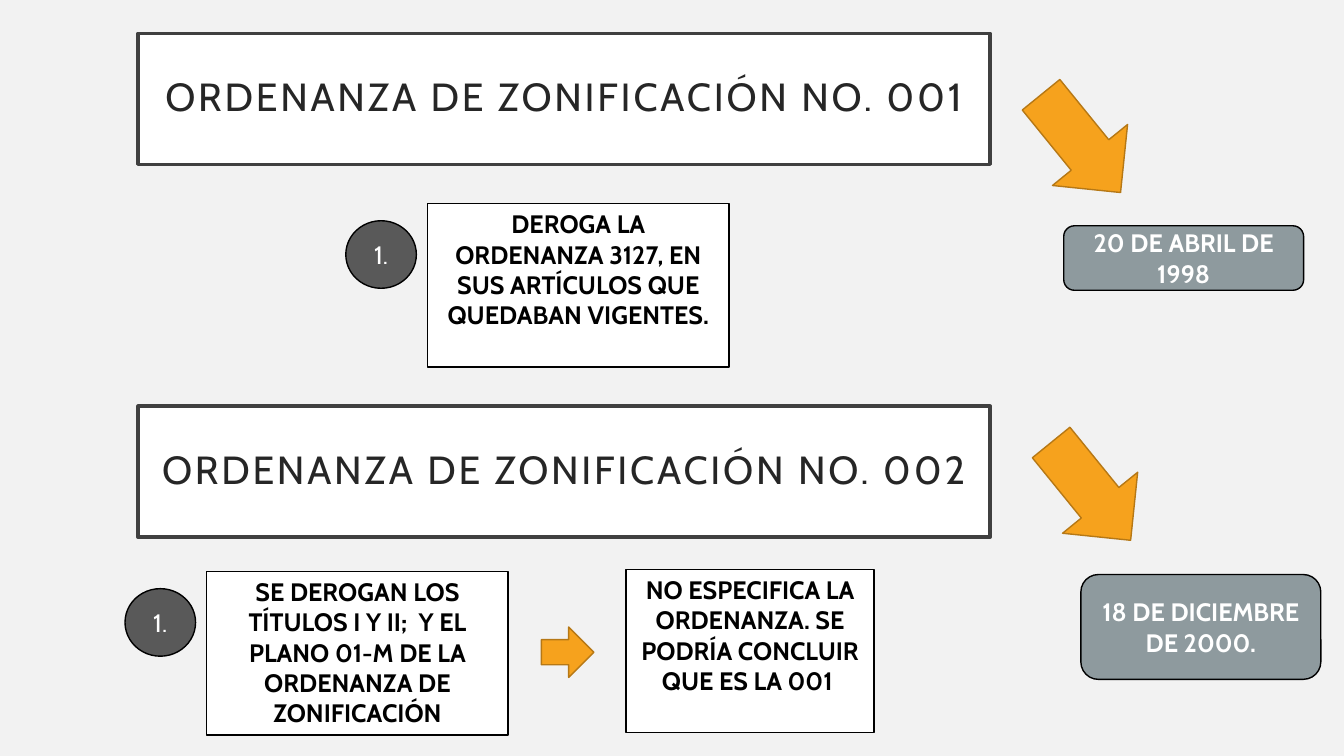
"""Build the slide on zoning ordinances 001 and 002."""
from pptx import Presentation
from pptx.dml.color import RGBColor
from pptx.enum.shapes import MSO_SHAPE
from pptx.enum.text import MSO_ANCHOR, MSO_AUTO_SIZE, PP_ALIGN
from pptx.util import Inches, Pt

RECT, OVAL = MSO_SHAPE.RECTANGLE, MSO_SHAPE.OVAL
ROUND, ARROW = MSO_SHAPE.ROUNDED_RECTANGLE, MSO_SHAPE.DOWN_ARROW
TOP, MIDDLE = MSO_ANCHOR.TOP, MSO_ANCHOR.MIDDLE
CENTER, NO_FIT = PP_ALIGN.CENTER, MSO_AUTO_SIZE.NONE

FONT = "Cabin"
COLORS = {
    "back": "F2F2F2", "white": "FFFFFF", "black": "000000", "frame": "404040",
    "title": "262626", "number": "595959", "date": "8E9A9E",
    "arrow": "F6A21D", "arrow_line": "B67815",
}
STYLES = {
    "title": {"fill": "white", "line": "frame", "width": 2.5, "ink": "title",
              "size": 28, "bold": False, "anchor": MIDDLE},
    "note": {"fill": "white", "line": "black", "width": 1, "ink": "black",
             "size": 18, "bold": True, "anchor": TOP},
    "number": {"fill": "number", "line": "black", "width": 1, "ink": "white",
               "size": 18, "bold": False, "anchor": MIDDLE},
    "date": {"fill": "date", "line": "black", "width": 1, "ink": "white",
             "size": 18, "bold": True, "anchor": MIDDLE},
    "arrow": {"fill": "arrow", "line": "arrow_line", "width": 1},
}
ORDINANCES = [
    {"title": "ORDENANZA DE ZONIFICACIÓN NO. 001", "top": 0.33,
     "number": "1.",
     "note": "DEROGA LA ORDENANZA 3127, EN SUS ARTÍCULOS QUE QUEDABAN VIGENTES.",
     "note_at": (4.24, 2.02), "arrow_at": (10.24, 0.8),
     "date": "20 DE ABRIL DE 1998", "date_box": (10.55, 2.24, 2.38, 0.64)},
    {"title": "ORDENANZA DE ZONIFICACIÓN NO. 002", "top": 4.03,
     "number": "1.",
     "note": "SE DEROGAN LOS TÍTULOS I Y II;  Y EL PLANO 01-M "
             "DE LA ORDENANZA DE ZONIFICACIÓN",
     "note_at": (2.05, 5.67), "arrow_at": (10.34, 4.25),
     "date": "18 DE DICIEMBRE DE 2000.", "date_box": (10.72, 5.7, 2.38, 1.04)},
]
REMARK = "NO ESPECIFICA LA ORDENANZA. SE PODRÍA CONCLUIR QUE ES LA 001 "
REMARK_BOX = (6.21, 5.65, 2.46, 1.62)
REMARK_ARROW = (5.38, 6.21, 0.5, 0.52)
TITLE_LEFT, TITLE_SIZE = 1.37, (8.45, 1.3)
NOTE_SIZE, NUMBER_SIZE, ARROW_SIZE = (2.99, 1.62), (0.7, 0.67), (0.96, 1.25)
NUMBER_SHIFT = (-0.81, 0.17)
ARROW_TURN = 320.9


def rgb(name):
    return RGBColor.from_string(COLORS[name])


def dress(shape, style, text=""):
    """Apply a named style and the text to a shape."""
    st = STYLES[style]
    shape.fill.solid()
    shape.fill.fore_color.rgb = rgb(st["fill"])
    shape.line.color.rgb = rgb(st["line"])
    shape.line.width = Pt(st["width"])
    if not text:
        return
    tf = shape.text_frame
    frame = {"word_wrap": True, "auto_size": NO_FIT, "vertical_anchor": st["anchor"]}
    if style == "title":
        sides = ("left", "top", "right", "bottom")
        frame.update({f"margin_{side}": Inches(0.2) for side in sides})
    for key, value in frame.items():
        setattr(tf, key, value)
    p = tf.paragraphs[0]
    p.alignment = CENTER
    r = p.add_run()
    r.text = text
    font = {"name": FONT, "size": Pt(st["size"]), "bold": st["bold"]}
    for key, value in font.items():
        setattr(r.font, key, value)
    r.font.color.rgb = rgb(st["ink"])
    if style == "title":
        p.line_spacing = 0.9
        r.font._element.set("spc", "200")


def add(s, kind, box, style, text="", turn=0):
    """Add a styled preset shape at a box given in inches."""
    shape = s.shapes.add_shape(kind, *map(Inches, box))
    shape.shadow.inherit = False
    shape.rotation = turn
    dress(shape, style, text)


def add_ordinance(s, item, first):
    """Add one ordinance: title, note, number, arrow and date."""
    title_box = (TITLE_LEFT, item["top"], *TITLE_SIZE)
    if first:
        title = s.shapes.title
        for key, value in zip(("left", "top", "width", "height"), title_box):
            setattr(title, key, Inches(value))
        dress(title, "title", item["title"])
    else:
        add(s, RECT, title_box, "title", item["title"])
    number_at = [a + b for a, b in zip(item["note_at"], NUMBER_SHIFT)]
    add(s, RECT, (*item["note_at"], *NOTE_SIZE), "note", item["note"])
    add(s, OVAL, (*number_at, *NUMBER_SIZE), "number", item["number"])
    add(s, ARROW, (*item["arrow_at"], *ARROW_SIZE), "arrow", turn=ARROW_TURN)
    add(s, ROUND, item["date_box"], "date", item["date"])


def main():
    prs = Presentation()
    prs.slide_width, prs.slide_height = Inches(13.33), Inches(7.5)
    s = prs.slides.add_slide(prs.slide_layouts[5])
    s.background.fill.solid()
    s.background.fill.fore_color.rgb = rgb("back")
    for i, item in enumerate(ORDINANCES):
        add_ordinance(s, item, i == 0)
    add(s, ARROW, REMARK_ARROW, "arrow", turn=270)
    add(s, RECT, REMARK_BOX, "note", REMARK)
    prs.save("out.pptx")


if __name__ == "__main__":
    main()
